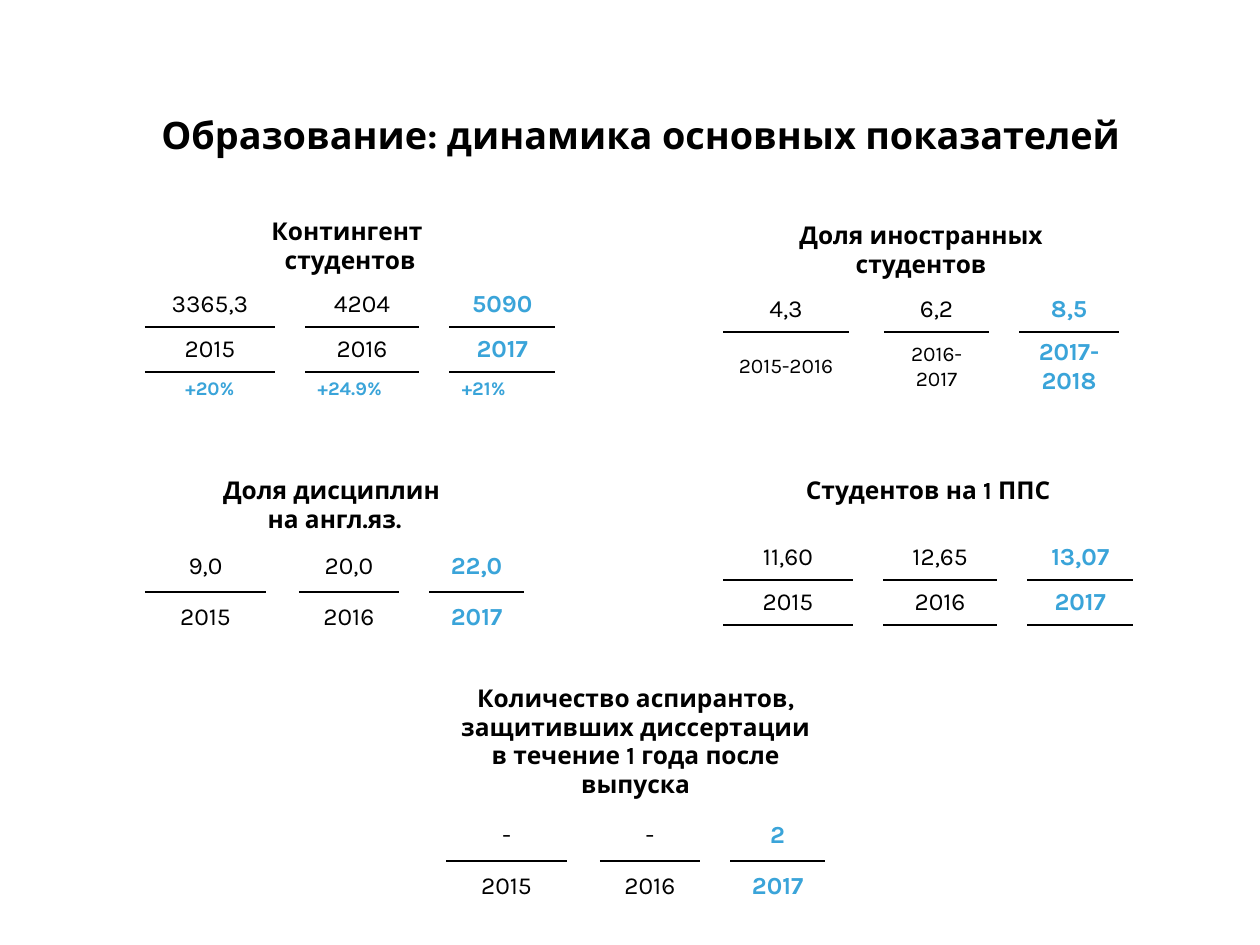
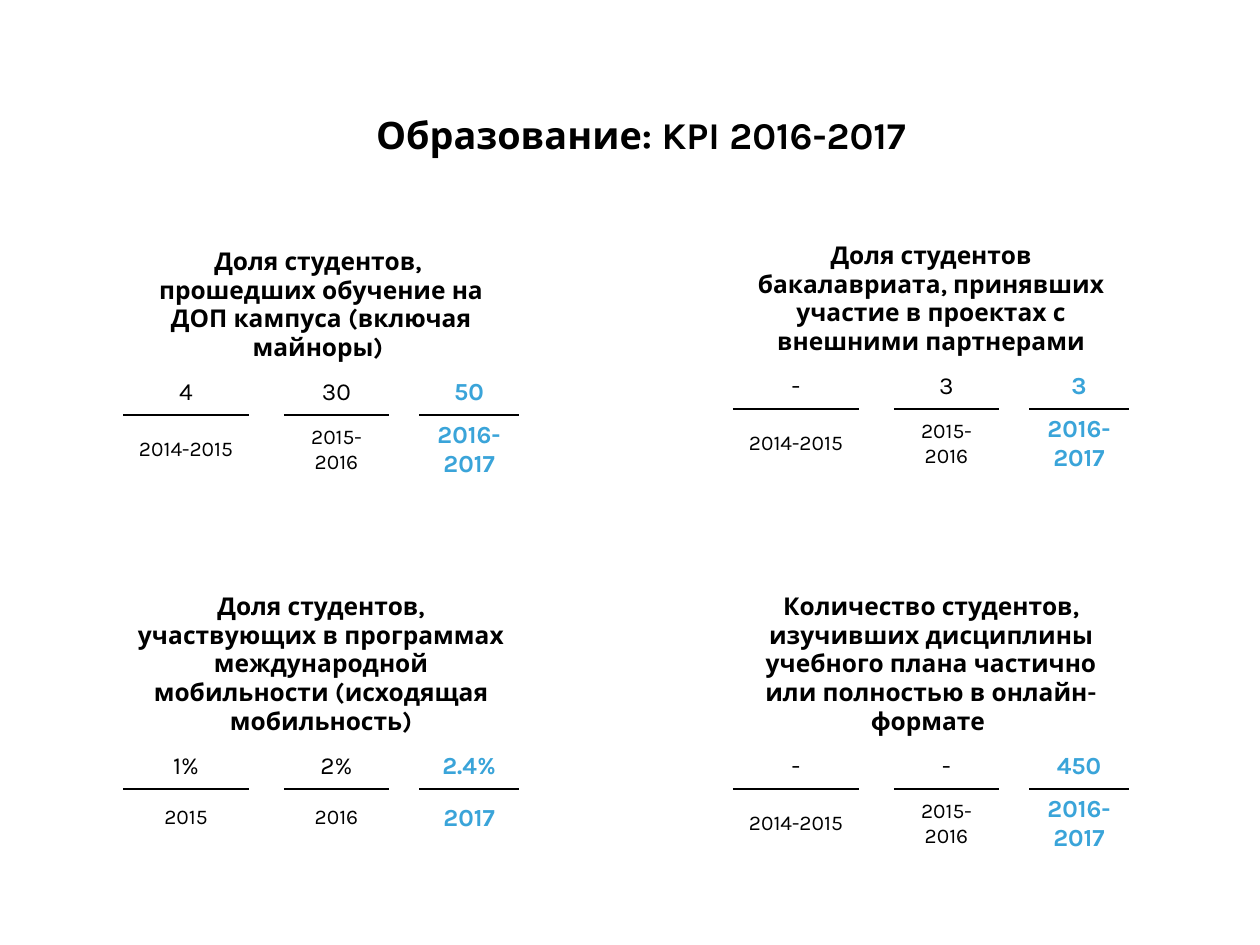
from lxml.etree import SubElement
from pptx import Presentation
from pptx.dml.color import RGBColor
from pptx.enum.text import MSO_ANCHOR as Anchor, MSO_AUTO_SIZE as AutoSize, PP_ALIGN as Align
from pptx.oxml.ns import qn
from pptx.util import Emu, Pt

FONT = "Karla"
COLORS = {"text": "000000", "accent": "3AA4D9", "page": "FFFFFF"}
NO_GRID_STYLE = "{2D5ABB26-0587-4C30-8999-92F81FD0307C}"
TITLE_BOX = (87, 102, 1108, 73)
TITLE_ONLY = 5
CALENDAR = [130, 30, 114, 30, 106]
ACADEMIC = [126, 35, 105, 30, 100]
COMPACT = [121, 33, 100, 30, 95]

SLIDES = [
    ("Образование: динамика основных показателей", [
        dict(at=(145, 212), columns=CALENDAR, rows=[70, 45, 45, 45],
             heading=["Контингент ", "студентов"],
             values=["3365,3", "4204", "5090"], years=["2015", "2016", "2017"],
             growth=["+20%", "+24.9%", "+21%"]),
        dict(at=(723, 216), columns=ACADEMIC, rows=[70, 46, 70],
             heading=["Доля иностранных студентов"],
             values=["4,3", "6,2", "8,5"],
             years=["2015-2016", "2016-2017", "2017-2018"], year_size=12),
        dict(at=(145, 471), columns=COMPACT, rows=[70, 51, 51],
             heading=["Доля дисциплин ", "на англ.яз."],
             values=["9,0", "20,0", "22,0"], years=["2015", "2016", "2017"]),
        dict(at=(446, 679), columns=COMPACT, rows=[131, 51, 51],
             heading=["Количество аспирантов, защитивших диссертации "
                      "в течение 1 года после выпуска"],
             values=["-", "-", "2"], years=["2015", "2016", "2017"]),
        dict(at=(723, 471), columns=CALENDAR, rows=[64, 45, 45, 45],
             heading=["Студентов на 1 ППС"],
             values=["11,60", "12,65", "13,07"], years=["2015", "2016", "2017"]),
    ]),
    ("Образование: KPI 2016-2017", [
        dict(at=(123, 242), columns=ACADEMIC, rows=[127, 46, 70],
             heading=["Доля студентов, ",
                      "прошедших обучение на ДОП кампуса (включая майноры) "],
             values=["4", "30", "50"],
             years=["2014-2015", "2015-2016", "2016-2017"], year_size=12),
        dict(at=(733, 236), columns=ACADEMIC, rows=[127, 46, 70],
             heading=["Доля студентов бакалавриата, принявших участие "
                      "в проектах с внешними партнерами"],
             values=["-", "3", "3"],
             years=["2014-2015", "2015-2016", "2016-2017"], year_size=12),
        dict(at=(123, 587), columns=ACADEMIC, rows=[156, 46, 58],
             heading=["Доля студентов, участвующих в программах "
                      "международной мобильности (исходящая мобильность)"],
             values=["1%", "2%", "2.4%"], years=["2015", "2016", "2017"], year_size=12),
        dict(at=(733, 587), columns=ACADEMIC, rows=[156, 46, 70],
             heading=["Количество студентов, изучивших дисциплины учебного плана "
                      "частично или полностью в онлайн-формате "],
             values=["-", "-", "450"],
             years=["2014-2015", "2015-2016", "2016-2017"], year_size=12),
    ]),
]


def px(length):
    """Turn whole pixels into EMU."""
    return Emu(round(length * 914400 / 126))


def write(paragraph, text, size=14, color="text", bold=False, align=Align.CENTER):
    """Add one formatted run to a paragraph."""
    paragraph.alignment = align
    run = paragraph.add_run()
    run.text = text
    run.font.name = FONT
    run.font.size = Pt(size)
    run.font.bold = bold
    run.font.color.rgb = RGBColor.from_string(COLORS[color])


def add_border(cell, side):
    """Draw a one point rule along one side of a cell."""
    line = SubElement(cell._tc.get_or_add_tcPr(), qn(f"a:{side}"), w=str(Pt(1)))
    fill = SubElement(line, qn("a:solidFill"))
    SubElement(fill, qn("a:srgbClr"), val=COLORS["text"])
    line.getparent().insert(0, line)


def add_title(slide, text, box):
    """Place and format the slide title."""
    title = slide.shapes.title
    title.left, title.top, title.width, title.height = map(px, box)
    frame = title.text_frame
    frame.auto_size = AutoSize.NONE
    frame.word_wrap = True
    frame.vertical_anchor = Anchor.TOP
    frame.margin_top = px(10)
    write(frame.paragraphs[0], text, 21.6, bold=True)


def add_heading(table, lines):
    """Merge the first row and write the indicator name in it."""
    cell = table.cell(0, 0)
    cell.merge(table.cell(0, len(table.columns) - 1))
    frame = cell.text_frame
    for index, line in enumerate(lines):
        paragraph = frame.add_paragraph() if index else frame.paragraphs[0]
        write(paragraph, line, bold=True)


def add_figures(table, row, texts, side, size=14):
    """Fill a ruled row, with the latest figure highlighted."""
    for index, text in enumerate(texts):
        cell = table.cell(row, 2 * index)
        cell.vertical_anchor = Anchor.MIDDLE
        add_border(cell, side)
        latest = index == len(texts) - 1
        write(cell.text_frame.paragraphs[0], text, 14 if latest else size,
              "accent" if latest else "text", latest)


def add_growth(table, row, texts):
    """Write the growth rates under the years."""
    for index, text in enumerate(texts):
        paragraph = table.cell(row, 2 * index).text_frame.paragraphs[0]
        write(paragraph, text, 11, "accent", True, Align.LEFT if index else Align.CENTER)


def add_indicator(slide, at, columns, rows, heading, values, years, year_size=14, growth=()):
    """Build one indicator table at the given corner."""
    left, top = at
    table = slide.shapes.add_table(len(rows), len(columns), px(left), px(top),
                                   px(sum(columns)), px(sum(rows))).table
    table.first_row = table.horz_banding = False
    table._tbl.tblPr.find(qn("a:tableStyleId")).text = NO_GRID_STYLE
    for column, width in zip(table.columns, columns):
        column.width = px(width)
    for row, height in zip(table.rows, rows):
        row.height = px(height)
    for cell in table.iter_cells():
        cell.fill.solid()
        cell.fill.fore_color.rgb = RGBColor.from_string(COLORS["page"])
    add_heading(table, heading)
    add_figures(table, 1, values, "lnB")
    add_figures(table, 2, years, "lnT", year_size)
    add_growth(table, 3, growth)
    for cell in table.iter_cells():
        if not cell.text_frame.text:
            SubElement(cell.text_frame.paragraphs[0]._p, qn("a:endParaRPr"), sz="1400")


def main():
    """Build the presentation and save it."""
    presentation = Presentation()
    presentation.slide_width, presentation.slide_height = px(1260), px(945)
    for title, indicators in SLIDES:
        slide = presentation.slides.add_slide(presentation.slide_layouts[TITLE_ONLY])
        add_title(slide, title, TITLE_BOX)
        for indicator in indicators:
            add_indicator(slide, **indicator)
    presentation.save("out.pptx")


if __name__ == "__main__":
    main()
